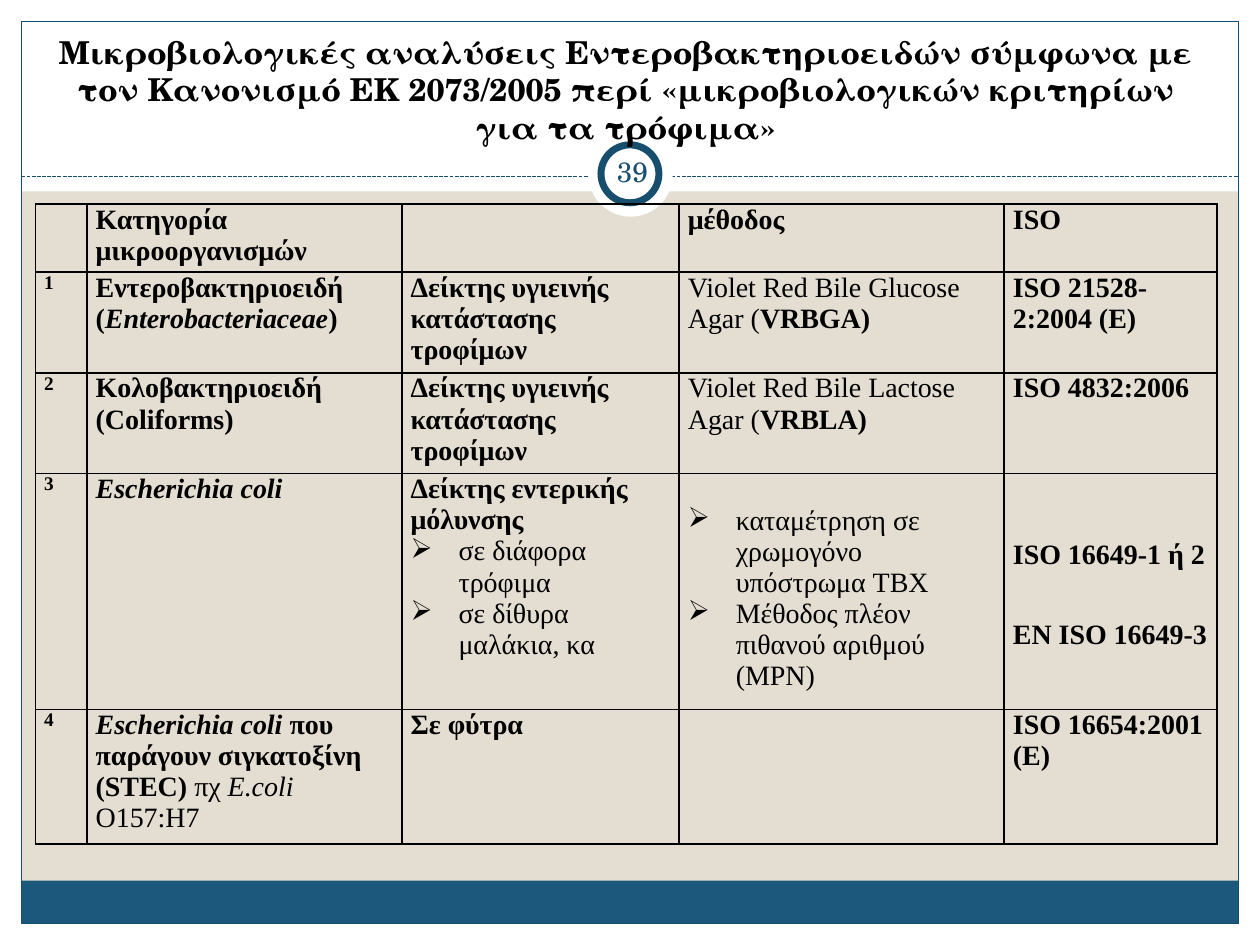
import pptx
import pptx.util
import pptx.dml.color
import pptx.enum.dml
import pptx.enum.shapes
import pptx.enum.text
import pptx.oxml.ns
import lxml.etree

Inches = pptx.util.Inches
Pt = pptx.util.Pt
SHAPES = pptx.enum.shapes.MSO_SHAPE
ANCHORS = pptx.enum.text.MSO_ANCHOR
qn = pptx.oxml.ns.qn

WHITE, BEIGE, BLUE, NAVY, BLACK = "FFFFFF", "E3DED1", "1B587C", "184E6D", "000000"
HEADING_FONT, TABLE_FONT = "TeX Gyre Schola", "Times New Roman"
COLUMNS = [0.41, 2.5, 2.2, 2.58, 1.69]
ROWS = [0.54, 0.8, 0.8, 1.87, 1.07]
HYGIENE = "Δείκτης υγιεινής κατάστασης τροφίμων"

# Each cell is a list of paragraphs, each a list of (text, style) spans.
CELLS = [
    [[], [[("Κατηγορία μικροοργανισμών", "b")]], [], [[("μέθοδος", "b")]], [[("ISO", "b")]]],
    [[[("1", "b")]],
     [[("Εντεροβακτηριοειδή (", "b"), ("Enterobacteriaceae", "bi"), (")", "b")]],
     [[(HYGIENE, "b")]],
     [[("Violet Red Bile Glucose Agar (", ""), ("VRBGA)", "b")]],
     [[("ISO 21528-2:2004 (E)", "b")]]],
    [[[("2", "b")]],
     [[("Kολοβακτηριοειδή (Coliforms)", "b")]],
     [[(HYGIENE, "b")]],
     [[("Violet Red Bile Lactose Agar (", ""), ("VRBLA)", "b")]],
     [[("ISO 4832:2006", "b")]]],
    [[[("3", "b")]],
     [[("Escherichia coli", "bi")]],
     [[("Δείκτης εντερικής μόλυνσης", "b")],
      [("σε διάφορα τρόφιμα", "*")], [("σε δίθυρα μαλάκια, κα", "*")]],
     [[("καταμέτρηση σε χρωμογόνο υπόστρωμα TBX", "*")],
      [("Μέθοδος πλέον πιθανού αριθμού (MPN)", "*")]],
     [[("ISO 16649-1 ή 2", "b")], [("EN ISO 16649-3", "b")]]],
    [[[("4", "b")]],
     [[("Escherichia coli ", "bi"), ("που παράγουν σιγκατοξίνη (STEC) ", "b"),
       ("πχ ", ""), ("E.coli", "i"), (" O157:H7", "")]],
     [[("Σε φύτρα", "b")]], [], [[("ISO 16654:2001 (E)", "b")]]],
]
TOP_MARGINS = {(3, 3): 0.25, (3, 4): 0.52}


def rgb(value):
    """Return the colour for a hex string."""
    return pptx.dml.color.RGBColor.from_string(value)


def style_span(span, font, size, colour, bold=False, italic=False):
    """Set the font of one run."""
    span.font.name, span.font.size = font, Pt(size)
    span.font.bold, span.font.italic = bold, italic
    span.font.color.rgb = rgb(colour)


def add_panel(page, box, fill=None, line=None, width=0.75, kind=SHAPES.RECTANGLE):
    """Add a plain shape with an optional fill and outline."""
    panel = page.shapes.add_shape(kind, *map(Inches, box))
    panel.shadow.inherit = False
    if fill:
        panel.fill.solid()
        panel.fill.fore_color.rgb = rgb(fill)
    else:
        panel.fill.background()
    if line:
        panel.line.color.rgb = rgb(line)
        panel.line.width = Pt(width)
    else:
        panel.line.fill.background()


def add_label(page, box, text, size, colour, bold=False, anchor=ANCHORS.TOP, inset=(0.1, 0.05)):
    """Add centred text in the heading font."""
    frame = page.shapes.add_textbox(*map(Inches, box)).text_frame
    frame.word_wrap = True
    frame.vertical_anchor = anchor
    frame.margin_left = frame.margin_right = Inches(inset[0])
    frame.margin_top = frame.margin_bottom = Inches(inset[1])
    frame.text = text
    para = frame.paragraphs[0]
    para.alignment = pptx.enum.text.PP_ALIGN.CENTER
    style_span(para.runs[0], HEADING_FONT, size, colour, bold)


def add_frame(page, box):
    """Draw the white margins, footer band, outline and dashed divider."""
    left, top, width, height = box
    right, bottom = left + width, top + height
    for margin in [(0, bottom, 10, 0.17), (0, 0, 10, 1.52),
                   (0, 0, left, 7.5), (right, 0, 0.17, 7.5)]:
        add_panel(page, margin, WHITE)
    add_panel(page, (left, bottom - 0.34, width, 0.34), BLUE)
    add_panel(page, box, line=NAVY)
    divider = page.shapes.add_connector(
        pptx.enum.shapes.MSO_CONNECTOR.STRAIGHT,
        Inches(left), Inches(top + 1.23), Inches(right), Inches(top + 1.23))
    divider.line.color.rgb = rgb(NAVY)
    divider.line.width = Pt(0.75)
    divider.line.dash_style = pptx.enum.dml.MSO_LINE.SQUARE_DOT
    lxml.etree.SubElement(divider.element.spPr, qn("a:effectLst"))


def add_page_badge(page, box, number):
    """Draw the ringed page number."""
    left, top, width, height = box
    add_panel(page, box, WHITE, kind=SHAPES.OVAL)
    add_panel(page, (left + 0.1, top + 0.1, width - 0.21, height - 0.21),
              WHITE, NAVY, 4, SHAPES.OVAL)
    add_label(page, (left + 0.1, top + 0.07, 0.5, 0.48), number, 16, NAVY,
              anchor=ANCHORS.MIDDLE, inset=(0.05, 0.05))


def add_borders(cell):
    """Give a cell a thin black line on every side."""
    properties = cell._tc.get_or_add_tcPr()
    for index, side in enumerate("LRTB"):
        line = lxml.etree.Element(qn(f"a:ln{side}"), w=str(Pt(1)))
        fill = lxml.etree.SubElement(line, qn("a:solidFill"))
        lxml.etree.SubElement(fill, qn("a:srgbClr"), val=BLACK)
        properties.insert(index, line)


def add_bullet(para):
    """Give a paragraph an arrow bullet and a hanging indent."""
    properties = para._p.get_or_add_pPr()
    properties.set("marL", str(Inches(0.38)))
    properties.set("indent", str(-Inches(0.38)))
    lxml.etree.SubElement(properties, qn("a:buChar"), char="➢")


def fill_cell(cell, paragraphs, size, top_margin):
    """Write styled paragraphs into one cell."""
    cell.fill.background()
    add_borders(cell)
    cell.margin_left = cell.margin_right = Inches(0.07)
    cell.margin_top, cell.margin_bottom = Inches(top_margin), 0
    frame = cell.text_frame
    for index, spans in enumerate(paragraphs):
        para = frame.add_paragraph() if index else frame.paragraphs[0]
        for text, style in spans:
            span = para.add_run()
            span.text = text
            style_span(span, TABLE_FONT, size, BLACK, "b" in style, "i" in style)
            if "*" in style:
                add_bullet(para)


def add_methods_table(page, box):
    """Build the table of microorganisms, methods and standards."""
    table = page.shapes.add_table(len(ROWS), len(COLUMNS), *map(Inches, box)).table
    table.first_row = table.horz_banding = False
    for column, width in zip(table.columns, COLUMNS):
        column.width = Inches(width)
    for r, height in enumerate(ROWS):
        table.rows[r].height = Inches(height)
        for c, paragraphs in enumerate(CELLS[r]):
            fill_cell(table.cell(r, c), paragraphs, 16 if c else 11, TOP_MARGINS.get((r, c), 0))
    table.cell(3, 4).text_frame.paragraphs[1].space_before = Pt(28)


def main():
    """Build and save the deck."""
    deck = pptx.Presentation()
    deck.slide_width, deck.slide_height = Inches(10), Inches(7.5)
    page = deck.slides.add_slide(deck.slide_layouts[6])
    page.background.fill.solid()
    page.background.fill.fore_color.rgb = rgb(BEIGE)
    add_frame(page, (0.17, 0.17, 9.66, 7.16))
    add_page_badge(page, (4.67, 1.05, 0.67, 0.67), "39")
    add_label(page, (0.28, 0.21, 9.37, 1.31),
              "Mικροβιολογικές αναλύσεις Εντεροβακτηριοειδών σύμφωνα με τον Κανονισμό "
              "ΕΚ 2073/2005 περί «μικροβιολογικών κριτηρίων για τα τρόφιμα»",
              18, BLACK, bold=True)
    add_methods_table(page, (0.28, 1.62, 9.37, 5.08))
    deck.save("out.pptx")


if __name__ == "__main__":
    main()
